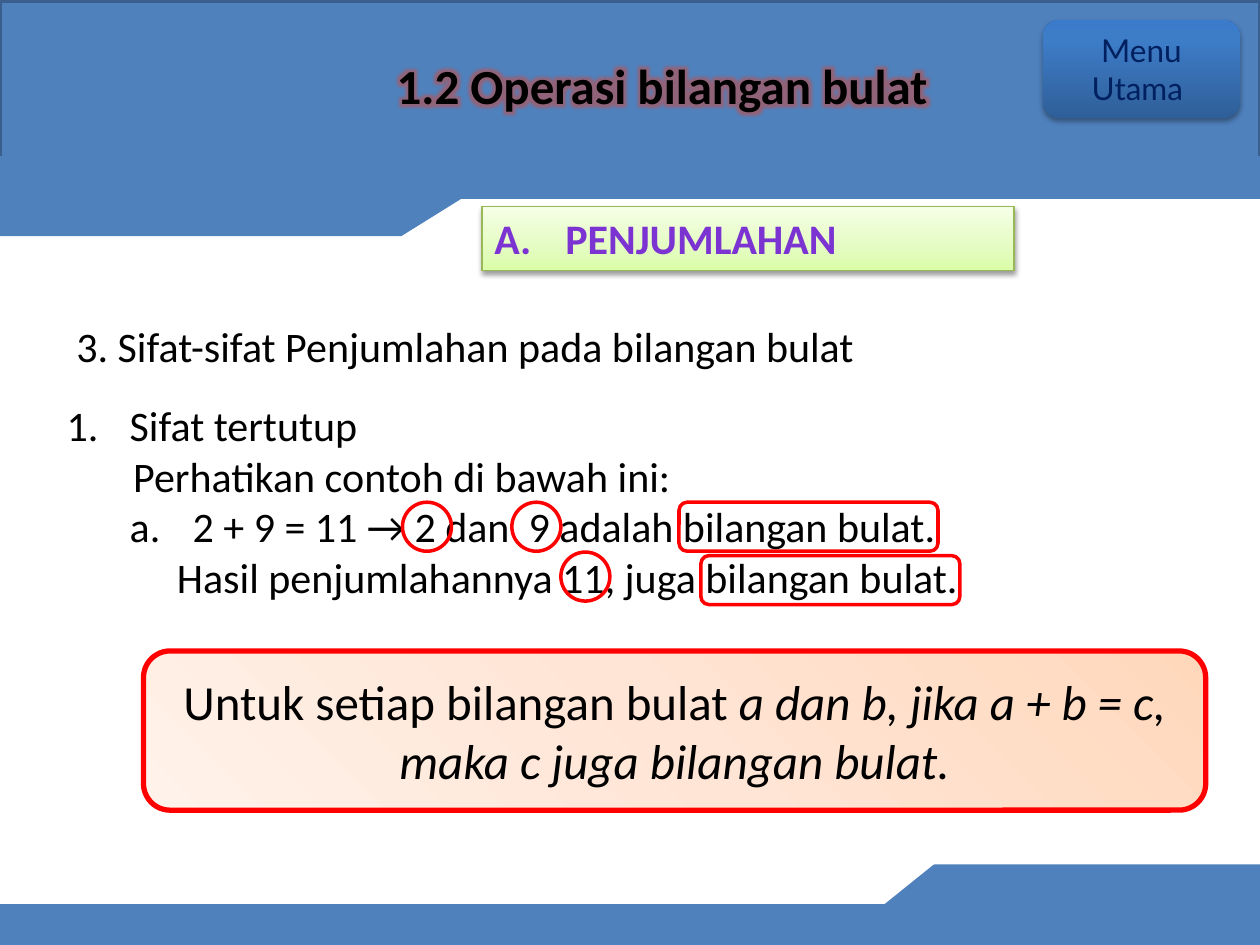
from typing import NamedTuple, Optional

from pptx import Presentation
from pptx.dml.color import RGBColor
from pptx.enum.shapes import MSO_SHAPE as Kind
from pptx.enum.text import MSO_ANCHOR as Anchor, MSO_AUTO_SIZE as Fit, PP_ALIGN as Align
from pptx.oxml import parse_xml
from pptx.oxml.ns import nsdecls, qn
from pptx.util import Pt

BLUE, RED, BLACK = "4F81BD", "FF0000", "000000"
LINEAR = '<a:lin ang="16200000" scaled="0"/>'
CORNER = '<a:path path="circle"><a:fillToRect l="100000" b="100000"/></a:path>'


class Box(NamedTuple):
    left: float
    top: float
    width: float
    height: float
    kind: Kind = Kind.RECTANGLE
    fill: Optional[str] = None
    line: Optional[str] = None
    weight: float = 2


class Line(NamedTuple):
    text: str
    left: float = 0
    hang: float = 0
    mark: Optional[str] = None


def color(code: str) -> RGBColor:
    return RGBColor.from_string(code)


def node(xml: str):
    tag, rest = xml.split(" ", 1) if " " in xml.split(">")[0] else xml.split(">", 1)
    gap = " " if " " in xml.split(">")[0] else ">"
    return parse_xml(f"{tag} {nsdecls('a')}{gap}{rest}")


def paint(shape, fill: Optional[str], line: Optional[str], weight: float) -> None:
    shape.shadow.inherit = False
    if fill:
        shape.fill.solid()
        shape.fill.fore_color.rgb = color(fill)
    else:
        shape.fill.background()
    if line:
        shape.line.color.rgb = color(line)
        shape.line.width = Pt(weight)
    else:
        shape.line.fill.background()


def draw(shapes, box: Box):
    shape = shapes.add_shape(box.kind, *map(Pt, box[:4]))
    paint(shape, box.fill, box.line, box.weight)
    return shape


def band(shapes, points: list[tuple[float, float]]) -> None:
    start, *rest = [(Pt(x), Pt(y)) for x, y in points]
    path = shapes.build_freeform(*start)
    path.add_line_segments(rest, close=True)
    paint(path.convert_to_shape(), BLUE, BLUE, 2)


def blend(shape, stops: list[tuple[int, str]], way: str) -> None:
    marks = "".join(
        f'<a:gs pos="{pos * 1000}"><a:srgbClr val="{code}"/></a:gs>' for pos, code in stops
    )
    props = shape._element.spPr
    props.replace(
        props.find(qn("a:noFill")),
        node(f'<a:gradFill rotWithShape="1"><a:gsLst>{marks}</a:gsLst>{way}</a:gradFill>'),
    )


def shade(shape, alpha: int, dist: float) -> None:
    shape._element.spPr.find(qn("a:effectLst")).append(node(
        f'<a:outerShdw blurRad="{Pt(3.1)}" dist="{Pt(dist)}" dir="5400000" rotWithShape="0">'
        f'<a:srgbClr val="{BLACK}"><a:alpha val="{alpha * 1000}"/></a:srgbClr></a:outerShdw>'
    ))


def style(para, size: float, code: str = BLACK, name: str = "Calibri",
          align: Align = Align.LEFT, bold: bool = False) -> None:
    para.alignment = align
    font = para.font
    font.size, font.name, font.bold = Pt(size), name, bold
    font.color.rgb = color(code)


def write(shape, lines: list[Line], size: float, code: str = BLACK, name: str = "Calibri",
          align: Align = Align.LEFT, bold: bool = False, anchor: Anchor = Anchor.TOP) -> None:
    frame = shape.text_frame
    frame.word_wrap = True
    frame.auto_size = Fit.NONE
    frame.vertical_anchor = anchor
    for index, line in enumerate(lines):
        para = frame.add_paragraph() if index else frame.paragraphs[0]
        para.add_run().text = line.text
        props = para._p.get_or_add_pPr()
        props.set("marL", str(Pt(line.left)))
        props.set("indent", str(Pt(line.hang)))
        if line.mark:
            props.append(node(f'<a:buAutoNum type="{line.mark}"/>'))
        style(para, size, code, name, align, bold)


def main() -> None:
    deck = Presentation()
    deck.slide_width, deck.slide_height = Pt(720), Pt(540)
    slide = deck.slides.add_slide(deck.slide_layouts[5])
    shapes = slide.shapes

    draw(shapes, Box(0, 517.5, 720, 22.5, fill=BLUE, line=BLUE))
    band(shapes, [(534, 495), (720, 495), (720, 517.5), (506, 517.5)])
    draw(shapes, Box(0, 1, 720, 90, fill=BLUE, line="3A5F8C"))
    band(shapes, [(229, 134), (0, 134), (0, 112.5), (263.5, 112.5)])
    band(shapes, [(0, 90), (720, 90), (720, 112.5), (0, 112.5)])

    topic = shapes.add_textbox(*map(Pt, (36.5, 179.5, 464, 36)))
    write(topic, [Line("3. Sifat-sifat Penjumlahan pada bilangan bulat")], 24)

    body = shapes.add_textbox(*map(Pt, (31, 225, 663, 152.5)))
    write(body, [
        Line("Sifat tertutup", 36, -36, "arabicPeriod"),
        Line("Perhatikan contoh di bawah ini:", 38),
        Line("2 + 9 = 11 → 2 dan", 72, -36, "alphaLcPeriod"),
        Line("Hasil penjumlahannya 11, juga bilangan bulat.", 63),
    ], 24)
    case = body.text_frame.paragraphs[2]
    space = case.add_run()
    space.text = " "
    space._r.get_or_add_rPr().set("spc", "540")
    case.add_run().text = "9 adalah bilangan bulat."

    for left, top in [(230, 287), (292.5, 287), (320.5, 315.5)]:
        draw(shapes, Box(left, top, 28, 28, Kind.OVAL, line=RED))
    for left, top in [(388, 287), (400.5, 317.5)]:
        draw(shapes, Box(left, top, 148, 28, Kind.ROUNDED_RECTANGLE, line=RED))

    rule = draw(shapes, Box(82, 372, 607, 91, Kind.ROUNDED_RECTANGLE, line=RED, weight=3))
    blend(rule, [(0, "FFD8BC"), (50, "FFE5D5"), (100, "FFF2EA")], CORNER)
    write(rule, [Line("Untuk setiap bilangan bulat ")], 28, align=Align.CENTER,
          anchor=Anchor.MIDDLE)
    claim = rule.text_frame.paragraphs[0].add_run()
    claim.text = "a dan b, jika a + b = c, maka c juga bilangan bulat."
    claim.font.italic = True

    title = shapes.title
    title.left, title.top, title.width, title.height = map(Pt, (219.5, 28, 321, 41))
    write(title, [Line("1.2 Operasi bilangan bulat")], 28, bold=True)
    title.text_frame.paragraphs[0].runs[0]._r.get_or_add_rPr().append(node(
        f'<a:effectLst><a:glow rad="{Pt(8)}"><a:srgbClr val="C0504D">'
        '<a:alpha val="60000"/></a:srgbClr></a:glow></a:effectLst>'
    ))
    shapes._spTree.append(title._element)

    label = draw(shapes, Box(275.5, 118, 304, 36.5, line="98B955", weight=0.75))
    blend(label, [(0, "DAFDA7"), (35, "E4FCC2"), (100, "F5FFE7")], LINEAR)
    shade(label, 38, 1.6)
    write(label, [Line("PENJUMLAHAN", 40.5, -40.5, "alphaUcPeriod")], 24, "7B34D2", bold=True)

    menu = draw(shapes, Box(596, 11.5, 112.5, 56, Kind.ROUNDED_RECTANGLE))
    blend(menu, [(0, "2F5F99"), (80, "3D7CC7"), (100, "3A7CCB")], LINEAR)
    shade(menu, 35, 1.8)
    write(menu, [Line("Menu"), Line("Utama ")], 18, "002060", "Lato", Align.CENTER,
          anchor=Anchor.MIDDLE)

    deck.save("out.pptx")


if __name__ == "__main__":
    main()
